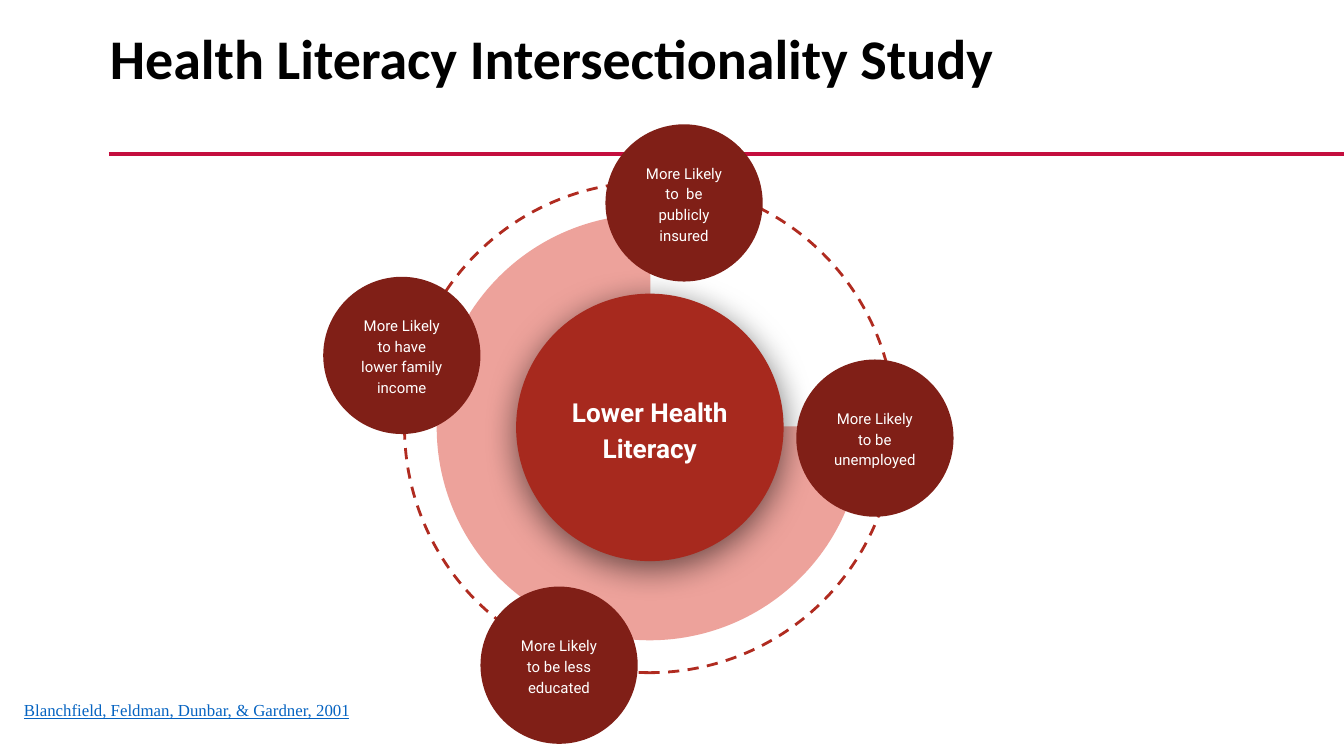
import lxml.etree
import pptx
import pptx.dml.color
import pptx.enum.dml
import pptx.enum.shapes
import pptx.enum.text
import pptx.oxml
import pptx.oxml.ns
import pptx.util

SHAPE = pptx.enum.shapes.MSO_SHAPE
ALIGN = pptx.enum.text.PP_ALIGN
ANCHOR = pptx.enum.text.MSO_ANCHOR
COLORS = {
    "ink": "000000",
    "white": "FFFFFF",
    "rule": "C40E3E",
    "ring": "B02B20",
    "pie": "EDA29B",
    "hub": "A7291E",
    "satellite": "801F17",
    "citation": "0563C1",
}

deck = pptx.Presentation()
deck.slide_width = pptx.util.Inches(10)
deck.slide_height = pptx.util.Inches(5.625)
page = deck.slides.add_slide(deck.slide_layouts[6])

# Square grid: 100 columns across the slide, rows of the same size.
CELL = deck.slide_width / 100


def add_round(kind, column, row, size, fill=None):
    """Add a round shape centred on a grid point."""
    left, top = column - size / 2, row - size / 2
    box = [round(value * CELL) for value in (left, top, size, size)]
    shape = page.shapes.add_shape(kind, *box)
    shape.shadow.inherit = False
    shape.line.fill.background()
    if fill:
        shape.fill.solid()
        shape.fill.fore_color.rgb = pptx.dml.color.RGBColor.from_string(COLORS[fill])
    else:
        shape.fill.background()
    return shape


def write(shape, text, color, spacing, align, anchor, inset, **font):
    frame = shape.text_frame
    frame.word_wrap = True
    frame.vertical_anchor = anchor
    for side, cells in zip(("left", "right", "top", "bottom"), inset):
        setattr(frame, "margin_" + side, round(cells * CELL))
    para = frame.paragraphs[0]
    para.alignment = align
    para.line_spacing = spacing
    span = para.add_run()
    span.text = text
    span.font.color.rgb = pptx.dml.color.RGBColor.from_string(COLORS[color])
    for name, value in font.items():
        setattr(span.font, name, value)


# Rule under the title
rule = page.shapes.add_connector(
    pptx.enum.shapes.MSO_CONNECTOR.STRAIGHT,
    *[round(value * CELL) for value in (8.1, 11.45, 100, 11.45)])
rule.line.color.rgb = pptx.dml.color.RGBColor.from_string(COLORS["rule"])
rule.line.width = pptx.util.Pt(2.25)
lxml.etree.SubElement(rule._element.spPr, pptx.oxml.ns.qn("a:effectLst"))

# Title and citation
title = page.shapes.add_textbox(
    *[round(value * CELL) for value in (7.2, 1.4, 92.3, 6.3)])
write(title, "Health Literacy Intersectionality Study", "ink", 0.9,
      ALIGN.LEFT, ANCHOR.MIDDLE, (1, 1, 0.5, 0.5),
      name="Calibri", size=pptx.util.Pt(30), bold=True)

citation = page.shapes.add_textbox(
    *[round(value * CELL) for value in (0.8, 51.3, 35.5, 3.5)])
write(citation, "Blanchfield, Feldman, Dunbar, & Gardner, 2001", "citation", 1.0,
      ALIGN.LEFT, ANCHOR.TOP, (1, 1, 1, 1),
      name="Times New Roman", size=pptx.util.Pt(9), underline=True)

# Dashed ring, three-quarter pie and hub share one centre
HUB = (48.35, 31.8)
ring = add_round(SHAPE.OVAL, *HUB, 36.5)
ring.rotation = 270
ring.line.color.rgb = pptx.dml.color.RGBColor.from_string(COLORS["ring"])
ring.line.width = pptx.util.Pt(1.5)
ring.line.dash_style = pptx.enum.dml.MSO_LINE.DASH

pie = add_round(SHAPE.PIE, *HUB, 31.7, "pie")
# Angles are stored in 60000ths of a degree, adjustments in 100000ths.
for index, degrees in enumerate((359.6, 270.25)):
    pie.adjustments[index] = degrees * 0.6

hub = add_round(SHAPE.OVAL, *HUB, 19.9, "hub")
effects = hub._element.spPr.find(pptx.oxml.ns.qn("a:effectLst"))
effects.append(pptx.oxml.parse_xml(
    f'<a:outerShdw {pptx.oxml.ns.nsdecls("a")} blurRad="{pptx.util.Pt(18)}" '
    f'dist="{pptx.util.Pt(4)}" dir="5400000" algn="ctr" rotWithShape="0">'
    f'<a:srgbClr val="{COLORS["ink"]}"><a:alpha val="55000"/></a:srgbClr>'
    '</a:outerShdw>'))
write(hub, "Lower Health Literacy", "white", 1.15,
      ALIGN.CENTER, ANCHOR.MIDDLE, (1, 1, 1, 1),
      name="Roboto", size=pptx.util.Pt(14), bold=True)

# Satellites: centre column, centre row, label
satellites = [
    (50.9, 15.1, "More Likely to  be publicly insured"),
    (65.1, 32.6, "More Likely to be unemployed"),
    (29.9, 26.45, "More Likely to have lower family income"),
    (41.6, 49.5, "More Likely to be less educated"),
]
for column, row, label in satellites:
    satellite = add_round(SHAPE.OVAL, column, row, 11.7, "satellite")
    write(satellite, label, "white", 1.15,
          ALIGN.CENTER, ANCHOR.MIDDLE, (1, 1, 1, 1),
          name="Roboto", size=pptx.util.Pt(8))

deck.save("out.pptx")
